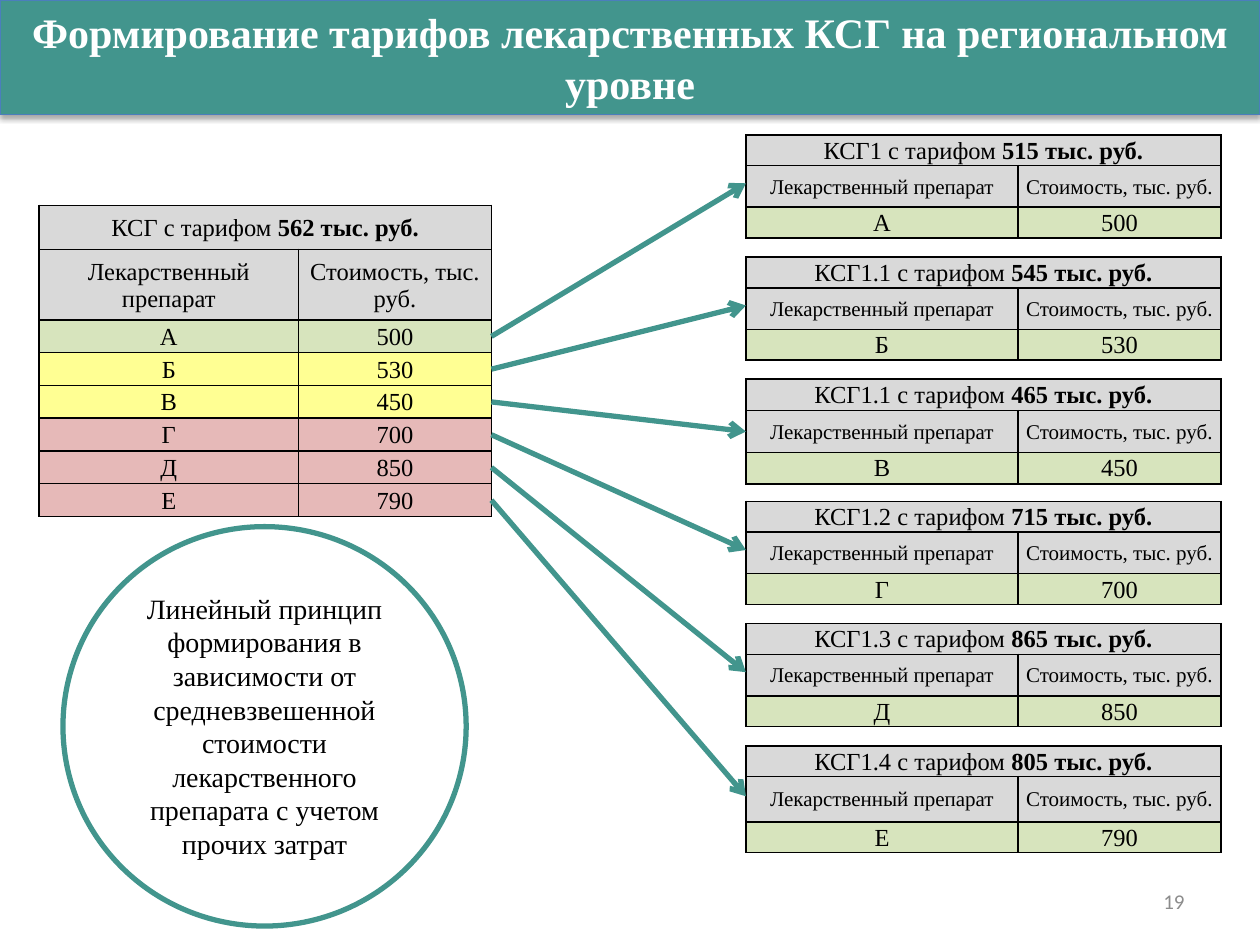
import pptx
import pptx.util
import pptx.dml.color
import pptx.enum.shapes
import pptx.enum.text
import pptx.oxml
import pptx.oxml.ns

Inches, Pt = pptx.util.Inches, pptx.util.Pt
ALIGN, ANCHOR = pptx.enum.text.PP_ALIGN, pptx.enum.text.MSO_ANCHOR
NS = pptx.oxml.ns.nsdecls("a")
SERIF = "Times New Roman"
TEAL, GREY, GREEN, YELLOW, PINK = "42958D", "D9D9D9", "D7E4BD", "FFFF93", "E6B9B8"

# Drug, cost, colour in the left table, new group, its tariff, row heights
DRUGS = [
    ("А", "500", GREEN, "КСГ1", "515", (0.22, 0.33, 0.22)),
    ("Б", "530", YELLOW, "КСГ1.1", "545", (0.22, 0.33, 0.22)),
    ("В", "450", YELLOW, "КСГ1.1", "465", (0.25, 0.33, 0.25)),
    ("Г", "700", PINK, "КСГ1.2", "715", (0.22, 0.33, 0.22)),
    ("Д", "850", PINK, "КСГ1.3", "865", (0.22, 0.33, 0.22)),
    ("Е", "790", PINK, "КСГ1.4", "805", (0.22, 0.36, 0.22)),
]
LEFT_X, LEFT_Y, LEFT_COLS = 0.31, 1.63, (2.06, 1.53)
LEFT_HEAD, LEFT_ROW = (0.35, 0.56), 0.26
RIGHT_X, RIGHT_Y, RIGHT_COLS, RIGHT_STEP = 5.92, 1.07, (2.16, 1.61), 0.97


def rgb(value):
    return pptx.dml.color.RGBColor.from_string(value)


def format_paragraph(p, size, color="000000", font=SERIF, align=ALIGN.CENTER):
    p.alignment = align
    p.font.size = Pt(size)
    p.font.name = font
    p.font.color.rgb = rgb(color)


def format_cell(cell, fill, size):
    cell.margin_left = cell.margin_right = cell.margin_top = Inches(0.01)
    cell.margin_bottom = 0
    cell.vertical_anchor = ANCHOR.MIDDLE
    format_paragraph(cell.text_frame.paragraphs[0], size)
    # Black borders come before the fill in the cell properties
    tc_pr = cell._tc.get_or_add_tcPr()
    for side in ("lnL", "lnR", "lnT", "lnB"):
        tc_pr.append(pptx.oxml.parse_xml(
            f'<a:{side} {NS} w="12700"><a:solidFill>'
            f'<a:srgbClr val="000000"/></a:solidFill></a:{side}>'))
    cell.fill.solid()
    cell.fill.fore_color.rgb = rgb(fill)


def add_tariff_table(s, x, y, cols, heights, group, tariff, drugs, head_size):
    """Tariff line across both columns, column heads, one row per drug."""
    frame = s.shapes.add_table(len(heights), 2, Inches(x), Inches(y),
                               Inches(sum(cols)), Inches(sum(heights)))
    table = frame.table
    table.first_row = table.horz_banding = False
    for column, width in zip(table.columns, cols):
        column.width = Inches(width)
    for row, height in zip(table.rows, heights):
        row.height = Inches(height)

    table.cell(0, 0).merge(table.cell(0, 1))
    p = table.cell(0, 0).text_frame.paragraphs[0]
    p.add_run().text = f"{group} с тарифом "
    r = p.add_run()
    r.text = f"{tariff} тыс. руб."
    r.font.bold = True

    rows = [("Лекарственный препарат", "Стоимость, тыс. руб.", GREY), *drugs]
    for i, (name, cost, fill) in enumerate(rows, start=1):
        for j, text in enumerate((name, cost)):
            table.cell(i, j).text = text
            format_cell(table.cell(i, j), fill, head_size if i == 1 else 14)
    for j in range(2):
        format_cell(table.cell(0, j), GREY, 14)


def add_arrow(s, x1, y1, x2, y2):
    line = s.shapes.add_connector(pptx.enum.shapes.MSO_CONNECTOR.STRAIGHT,
                                  Inches(x1), Inches(y1), Inches(x2), Inches(y2))
    line.line.color.rgb = rgb(TEAL)
    line.line.width = Pt(3)
    line.line._get_or_add_ln().append(
        pptx.oxml.parse_xml(f'<a:tailEnd {NS} type="arrow"/>'))
    line._element.spPr.append(pptx.oxml.parse_xml(f"<a:effectLst {NS}/>"))


def add_title(s, text, width):
    sp = s.shapes.title
    sp.left, sp.top, sp.width, sp.height = 0, 0, width, Inches(0.91)
    sp.fill.solid()
    sp.fill.fore_color.rgb = rgb(TEAL)
    sp.line.color.rgb = rgb("4B7EBC")
    sp.line.width = Pt(0.75)
    sp._element.spPr.append(pptx.oxml.parse_xml(
        f'<a:effectLst {NS}><a:outerShdw blurRad="39370" dist="22860" dir="5400000" '
        'rotWithShape="0"><a:srgbClr val="000000"><a:alpha val="35000"/></a:srgbClr>'
        '</a:outerShdw></a:effectLst>'))
    tf = sp.text_frame
    tf.text = text
    tf.auto_size = pptx.enum.text.MSO_AUTO_SIZE.NONE
    tf.vertical_anchor = ANCHOR.MIDDLE
    format_paragraph(tf.paragraphs[0], 24, "FFFFFF")
    tf.paragraphs[0].font.bold = True


def add_circle_note(s, text):
    sp = s.shapes.add_shape(pptx.enum.shapes.MSO_SHAPE.OVAL,
                            Inches(0.5), Inches(4.18), Inches(3.2), Inches(3.17))
    sp.shadow.inherit = False
    sp.fill.background()
    sp.line.color.rgb = rgb(TEAL)
    sp.line.width = Pt(3)
    tf = sp.text_frame
    tf.word_wrap = True
    tf.vertical_anchor = ANCHOR.TOP
    tf.text = text
    format_paragraph(tf.paragraphs[0], 16)


def add_page_number(s, number):
    sp = s.shapes.add_textbox(Inches(7.17), Inches(6.95), Inches(2.33), Inches(0.4))
    tf = sp.text_frame
    tf.word_wrap = True
    tf.vertical_anchor = ANCHOR.MIDDLE
    tf.text = number
    format_paragraph(tf.paragraphs[0], 12, "8C8C8C", "Calibri", ALIGN.RIGHT)


def main():
    prs = pptx.Presentation()
    prs.slide_width, prs.slide_height = Inches(10), Inches(7.5)
    s = prs.slides.add_slide(prs.slide_layouts[5])

    add_page_number(s, "19")
    add_title(s, "Формирование тарифов лекарственных КСГ на региональном уровне",
              prs.slide_width)

    # The single group on the left
    add_tariff_table(s, LEFT_X, LEFT_Y, LEFT_COLS,
                     (*LEFT_HEAD, *[LEFT_ROW] * len(DRUGS)), "КСГ", "562",
                     [drug[:3] for drug in DRUGS], 14)
    add_circle_note(s, "Линейный принцип формирования в зависимости от "
                       "средневзвешенной стоимости лекарственного препарата "
                       "с учетом прочих затрат")

    # One new group per drug on the right, each with its arrow
    for i, (name, cost, _, group, tariff, heights) in enumerate(DRUGS):
        y = RIGHT_Y + i * RIGHT_STEP
        add_tariff_table(s, RIGHT_X, y, RIGHT_COLS, heights, group, tariff,
                         [(name, cost, GREEN)], 12)
        add_arrow(s, LEFT_X + sum(LEFT_COLS),
                  LEFT_Y + sum(LEFT_HEAD) + (i + 0.5) * LEFT_ROW,
                  RIGHT_X, y + sum(heights) / 2)

    prs.save("out.pptx")


if __name__ == "__main__":
    main()
